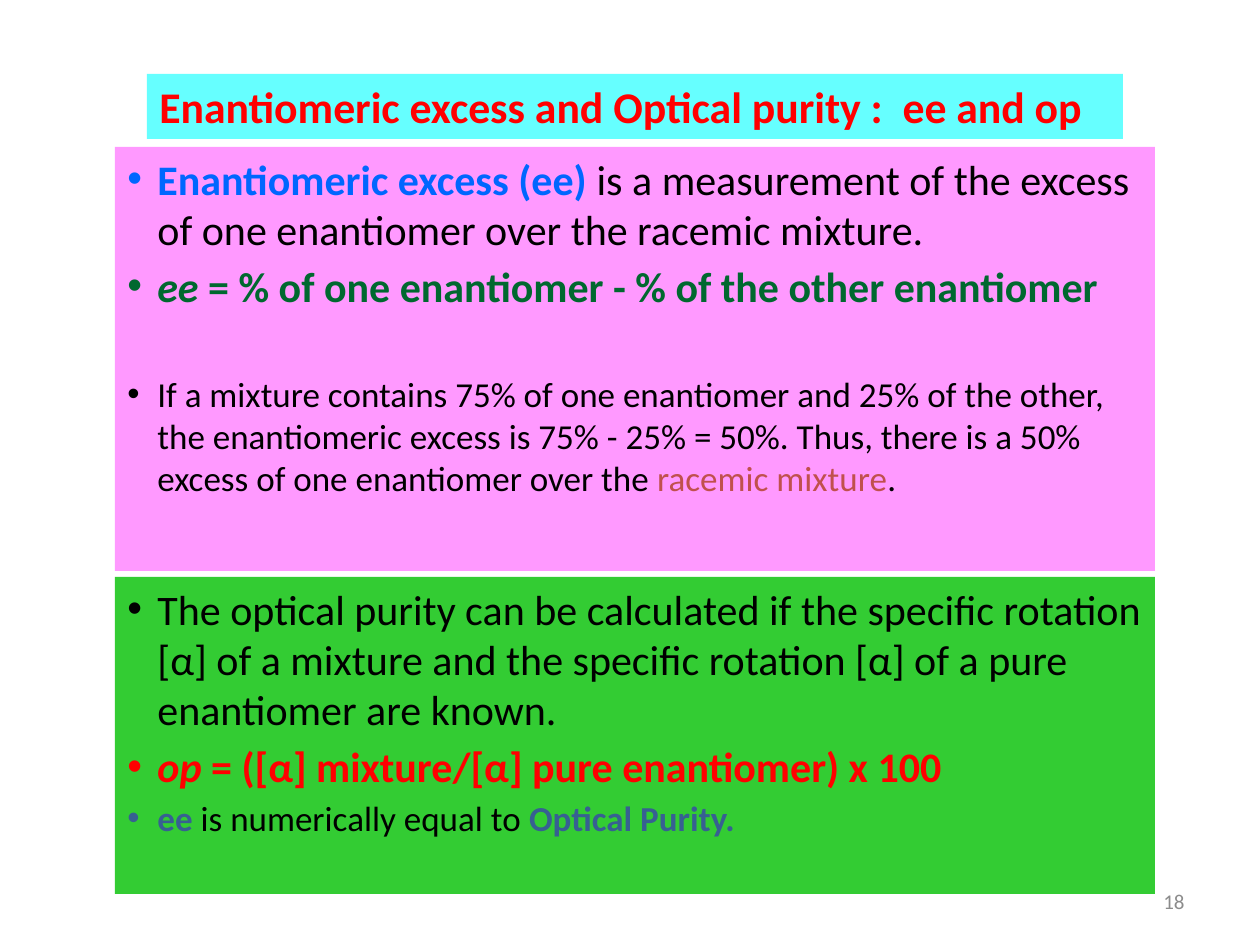
import pptx
import pptx.dml.color
import pptx.enum.shapes
import pptx.enum.text
import pptx.util
from lxml import etree
from pptx.oxml.ns import qn

EMU_PER_PX = 914400 / 126
BLACK, RED, BLUE, GREEN, SLATE = "000000", "FF0000", "0066FF", "00682F", "376092"


def px(length):
    return pptx.util.Emu(round(length * EMU_PER_PX))


def color(hex_string):
    return pptx.dml.color.RGBColor.from_string(hex_string)


# Each panel: left, top, width, height, fill, anchor, alignment, paragraphs.
# Each paragraph: bulleted, size, space before in points, runs.
# Each run: text, colour, bold, italic.
TOP, MIDDLE = pptx.enum.text.MSO_ANCHOR.TOP, pptx.enum.text.MSO_ANCHOR.MIDDLE
LEFT, RIGHT = pptx.enum.text.PP_ALIGN.LEFT, pptx.enum.text.PP_ALIGN.RIGHT
panels = [
    (903, 876, 294, 50, None, MIDDLE, RIGHT, [
        (False, 12, 0, [("18", "8C8C8C", False, False)]),
    ]),
    (115, 147, 1040, 424, "FF99FF", TOP, LEFT, [
        (True, 24, 0, [
            ("Enantiomeric excess (ee) ", BLUE, True, False),
            ("is a measurement of the excess of one enantiomer over the racemic mixture.",
             BLACK, False, False),
        ]),
        (True, 24, 3.6, [
            ("ee", GREEN, True, True),
            (" = % of one enantiomer - % of the other enantiomer", GREEN, True, False),
        ]),
        (True, 20, 35.5, [
            ("If a mixture contains 75% of one enantiomer and 25% of the other, "
             "the enantiomeric excess is 75% - 25% = 50%. Thus, there is a 50% "
             "excess of one enantiomer over the ", BLACK, False, False),
            ("racemic mixture", "C0504D", False, False),
            (".", BLACK, False, False),
        ]),
    ]),
    (147, 74, 976, 65, "66FFFF", TOP, LEFT, [
        (False, 25, 0, [
            ("Enantiomeric excess and Optical purity :  ee and op", RED, True, False),
        ]),
    ]),
    (115, 577, 1040, 317, "33CC33", TOP, LEFT, [
        (True, 24, 0, [
            ("The optical purity can be calculated if the specific rotation [α] of a "
             "mixture and the specific rotation [α] of a pure enantiomer are known.",
             BLACK, False, False),
        ]),
        (True, 24, 3.6, [
            ("op", RED, True, True),
            (" = ([α] mixture/[α] pure enantiomer) x 100", RED, True, False),
        ]),
        (True, 20, 3, [
            ("ee", SLATE, True, False),
            (" is numerically equal to ", BLACK, False, False),
            ("Optical Purity.", SLATE, True, False),
        ]),
    ]),
]

deck = pptx.Presentation()
deck.slide_width = pptx.util.Inches(10)
deck.slide_height = pptx.util.Inches(7.5)
page = deck.slides.add_slide(deck.slide_layouts[6])

for left, top, width, height, fill, anchor, alignment, paragraphs in panels:
    frame = px(left), px(top), px(width), px(height)
    if fill:
        box = page.shapes.add_shape(pptx.enum.shapes.MSO_SHAPE.RECTANGLE, *frame)
        box.shadow.inherit = False
        box.fill.solid()
        box.fill.fore_color.rgb = color(fill)
        box.line.fill.background()
    else:
        box = page.shapes.add_textbox(*frame)
    box.text_frame.word_wrap = True
    box.text_frame.vertical_anchor = anchor

    for index, (bulleted, size, space, runs) in enumerate(paragraphs):
        para = box.text_frame.add_paragraph() if index else box.text_frame.paragraphs[0]
        para.alignment = alignment
        para.space_before = pptx.util.Pt(space)
        if bulleted:
            properties = para._p.get_or_add_pPr()
            properties.set("marL", str(px(30)))
            properties.set("indent", str(-px(30)))
            etree.SubElement(properties, qn("a:buFont"), typeface="Arial")
            etree.SubElement(properties, qn("a:buChar"), char="•")
        for text, ink, bold, italic in runs:
            span = para.add_run()
            span.text = text
            span.font.name = "Calibri"
            span.font.size = pptx.util.Pt(size)
            span.font.bold = bold
            span.font.italic = italic
            span.font.color.rgb = color(ink)

deck.save("out.pptx")
